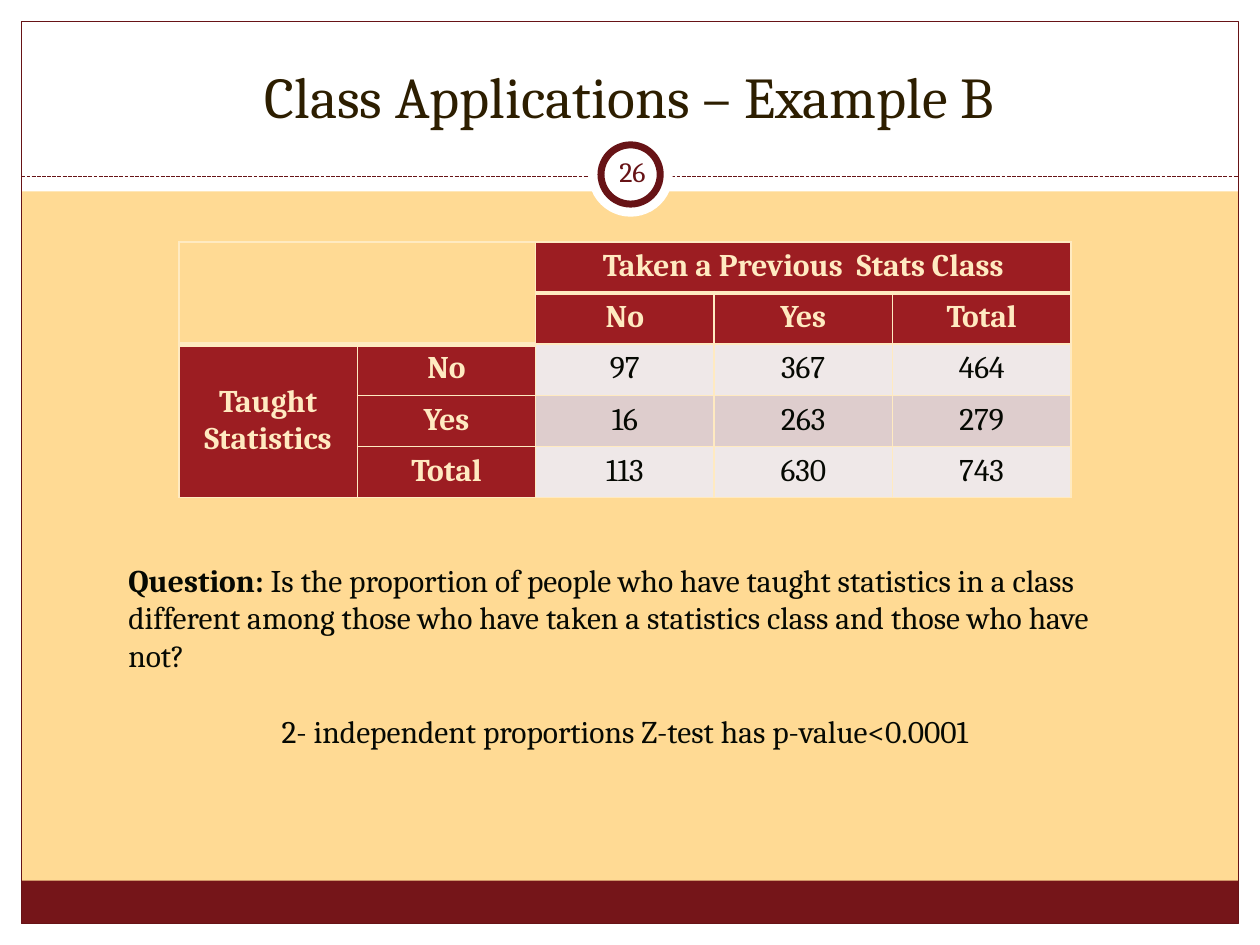
from pptx import Presentation
from pptx.dml.color import RGBColor
from pptx.enum.dml import MSO_LINE
from pptx.enum.shapes import MSO_CONNECTOR, MSO_SHAPE
from pptx.enum.text import MSO_ANCHOR, PP_ALIGN
from pptx.oxml.ns import qn
from pptx.util import Inches, Pt
from lxml.etree import SubElement

INK, CREAM, RED, MAROON = "060903", "FFEAC1", "9C1D22", "671316"
BODY = {"size": Pt(18), "name": "Cambria"}
HEADERS = ["No", "Yes", "Total"]
COUNTS = [[97, 367, 464], [16, 263, 279], [113, 630, 743]]
BANDS = ["EFE8E8", "DECDCD"]


def color(value):
    return RGBColor.from_string(value)


def add_run(p, text, fill, **formats):
    r = p.add_run()
    r.text = text
    r.font.color.rgb = color(fill)
    for key, value in {**BODY, **formats}.items():
        setattr(r.font, key, value)


def add_shape(s, kind, box, fill=None, line=None, width=0.75):
    sp = s.shapes.add_shape(kind, *map(Inches, box))
    sp.shadow.inherit = False
    if fill:
        sp.fill.solid()
        sp.fill.fore_color.rgb = color(fill)
    else:
        sp.fill.background()
    if line:
        sp.line.color.rgb = color(line)
        sp.line.width = Pt(width)
    else:
        sp.line.fill.background()


def add_text(s, box, anchor=MSO_ANCHOR.TOP, inset=None):
    tf = s.shapes.add_textbox(*map(Inches, box)).text_frame
    tf.word_wrap = True
    tf.vertical_anchor = anchor
    if inset is not None:
        for side in ("left", "top", "right", "bottom"):
            setattr(tf, f"margin_{side}", Inches(inset))
    return tf


def draw_frame(s, x, y, w, h):
    right, bottom = x + w, y + h
    strips = [(0, bottom, 10, 0.17), (0, 0, 10, 1.52), (0, 0, x, 7.5), (right, 0, 0.17, 7.5)]
    for strip in strips:
        add_shape(s, MSO_SHAPE.RECTANGLE, strip, "FFFFFF")
    add_shape(s, MSO_SHAPE.RECTANGLE, (x, bottom - 0.34, w, 0.34), "751519")
    add_shape(s, MSO_SHAPE.RECTANGLE, (x, y, w, h), line=MAROON)
    rule = s.shapes.add_connector(
        MSO_CONNECTOR.STRAIGHT, Inches(x), Inches(1.4), Inches(right), Inches(1.4)
    )
    rule.line.color.rgb = color(MAROON)
    rule.line.width = Pt(0.75)
    rule.line.dash_style = MSO_LINE.SQUARE_DOT
    SubElement(rule._element.spPr, qn("a:effectLst"))


def draw_title(s, box):
    p = add_text(s, box, MSO_ANCHOR.BOTTOM).paragraphs[0]
    p.alignment = PP_ALIGN.CENTER
    add_run(p, "Class Applications – Example B", "2D1E00", size=Pt(33))


def draw_badge(s, x, y, size):
    ring = size - 0.2
    add_shape(s, MSO_SHAPE.OVAL, (x, y, size, size), "FFFFFF")
    add_shape(s, MSO_SHAPE.OVAL, (x + 0.1, y + 0.1, ring, ring), "FFFFFF", MAROON, 4)
    tf = add_text(s, (x + 0.1, y + 0.07, 0.5, 0.48), MSO_ANCHOR.MIDDLE, 0.05)
    p = tf.paragraphs[0]
    p.alignment = PP_ALIGN.CENTER
    add_run(p, "26", MAROON, size=Pt(16))


def set_borders(cell, top, bottom):
    tcPr = cell._tc.get_or_add_tcPr()
    for side, width in {"L": 1, "R": 1, "T": top, "B": bottom}.items():
        ln = SubElement(tcPr, qn(f"a:ln{side}"), w=str(Pt(width)))
        SubElement(SubElement(ln, qn("a:solidFill")), qn("a:srgbClr"), val=CREAM)


def fill_cell(cell, text, fill, ink=CREAM, bold=True):
    cell.fill.solid()
    cell.fill.fore_color.rgb = color(fill)
    p = cell.text_frame.paragraphs[0]
    p.alignment = PP_ALIGN.CENTER
    add_run(p, text, ink, bold=bold)


def draw_table(s, box):
    table = s.shapes.add_table(5, 5, *map(Inches, box)).table
    for r in range(5):
        for c in range(5):
            edge = 1 if c >= 2 else 2
            set_borders(table.cell(r, c), 3 if r == edge else 1, 3 if r < edge else 1)
    for first, last in [((0, 0), (1, 1)), ((0, 2), (0, 4)), ((2, 0), (4, 0))]:
        table.cell(*first).merge(table.cell(*last))
    table.cell(0, 0).fill.background()
    fill_cell(table.cell(0, 2), "Taken a Previous  Stats Class", RED)
    fill_cell(table.cell(2, 0), "Taught Statistics", RED)
    table.cell(2, 0).vertical_anchor = MSO_ANCHOR.MIDDLE
    for i, (header, counts) in enumerate(zip(HEADERS, COUNTS)):
        fill_cell(table.cell(1, i + 2), header, RED)
        fill_cell(table.cell(i + 2, 1), header, RED)
        for j, count in enumerate(counts):
            fill_cell(table.cell(i + 2, j + 2), str(count), BANDS[i % 2], INK, False)


def draw_question(s, box):
    tf = add_text(s, box)
    p = tf.paragraphs[0]
    add_run(p, "Question: ", INK, bold=True)
    add_run(
        p,
        "Is the proportion of people who have taught statistics in a class different "
        "among those who have taken a statistics class and those who have not?",
        INK,
    )
    p = tf.add_paragraph()
    p.alignment = PP_ALIGN.CENTER
    p.space_before = Pt(21.5)
    add_run(p, "2- independent proportions Z-test has p-value<0.0001", INK)


def main():
    prs = Presentation()
    prs.slide_width, prs.slide_height = Inches(10), Inches(7.5)
    s = prs.slides.add_slide(prs.slide_layouts[6])
    s.background.fill.solid()
    s.background.fill.fore_color.rgb = color("FFDA94")
    draw_frame(s, 0.17, 0.17, 9.66, 7.16)
    draw_badge(s, 4.67, 1.05, 0.67)
    draw_title(s, (0.33, 0.25, 9.33, 0.83))
    draw_table(s, (1.42, 1.92, 7.08, 2.03))
    draw_question(s, (0.92, 4.4, 8.08, 2.22))
    prs.save("out.pptx")


if __name__ == "__main__":
    main()
